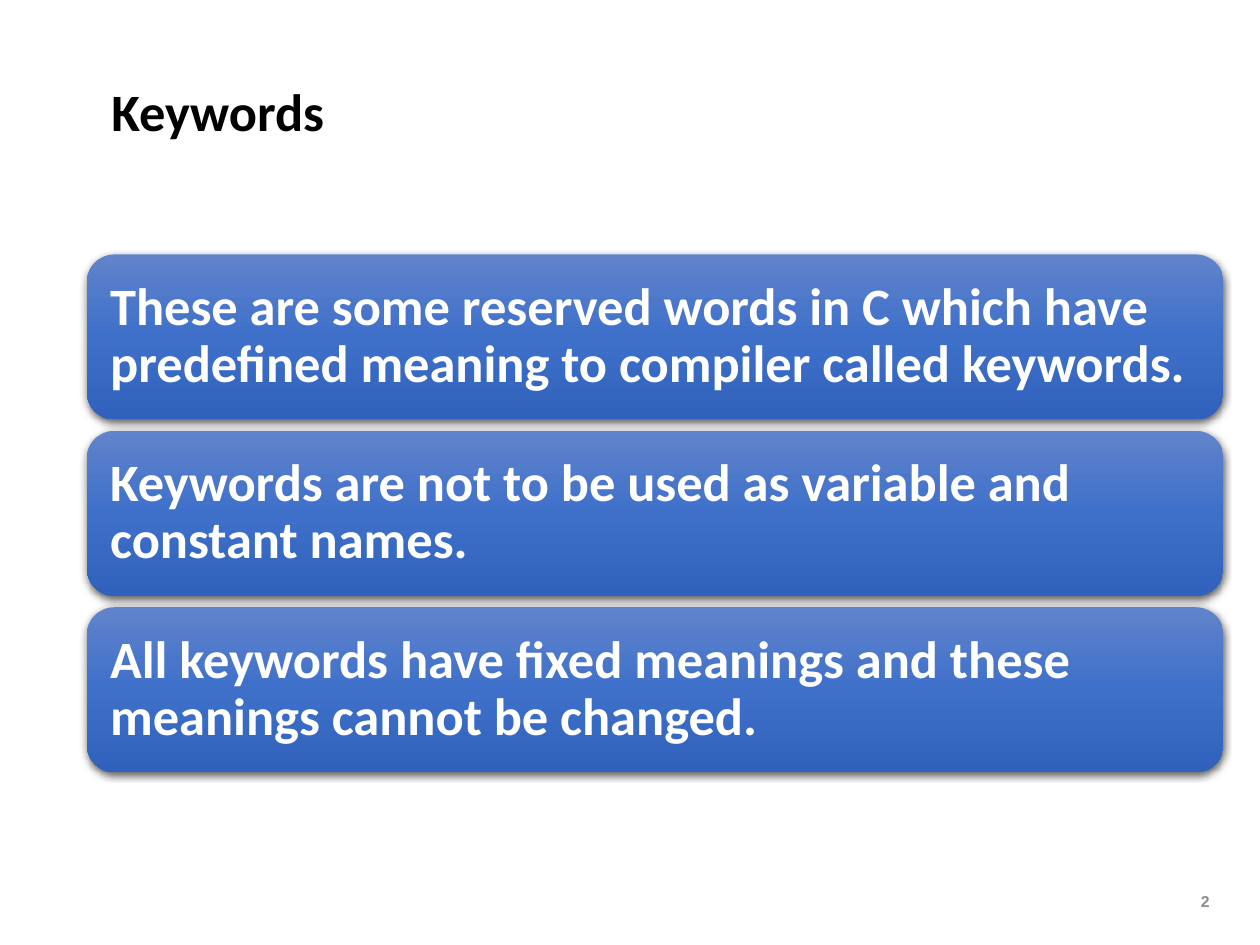
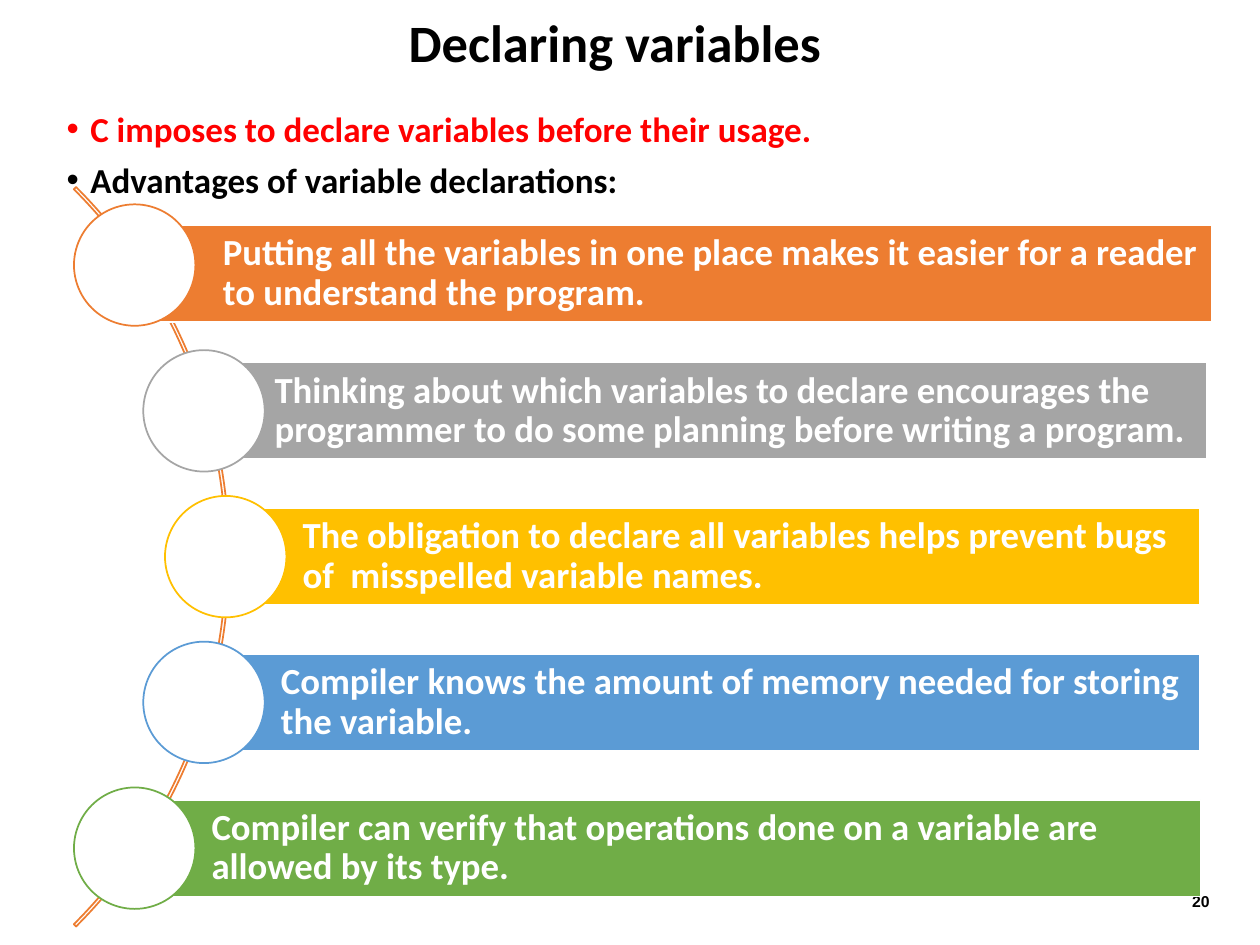
import pptx
import pptx.dml.color
import pptx.enum.shapes
import pptx.enum.text
import pptx.oxml
import pptx.oxml.ns
import pptx.util

Pt = pptx.util.Pt
SHAPE = pptx.enum.shapes.MSO_SHAPE
ALIGN = pptx.enum.text.PP_ALIGN
MIDDLE = pptx.enum.text.MSO_ANCHOR.MIDDLE
NS = pptx.oxml.ns.nsdecls("a")

COLORS = {
    "black": "000000",
    "white": "FFFFFF",
    "red": "FF0000",
    "number_gray": "8C8C8C",
    "card_top": "6183CB",
    "card_middle": "3E70CA",
    "card_bottom": "3062BB",
    "orange": "ED7D31",
    "gray": "A5A5A5",
    "yellow": "FFC000",
    "blue": "5B9BD5",
    "green": "70AD47",
}

KEYWORD_FACTS = [
    "These are some reserved words in C which have predefined meaning to compiler called keywords.",
    "Keywords are not to be used as variable and constant names.",
    "All keywords have fixed meanings and these meanings cannot be changed.",
]

# circle centre x, bar left, bar width, bar drop below the circle's centre line, colour, text
ADVANTAGES = [
    (77, 83.5, 609, 5, "orange",
     "Putting all the variables in one place makes it easier for a reader to understand the program."),
    (116.6, 113, 576.7, 0, "gray",
     "Thinking about which variables to declare encourages the programmer to do some planning "
     "before writing a program."),
    (129, 129, 556.5, 0, "yellow",
     "The obligation to declare all variables helps prevent bugs of  misspelled variable names."),
    (116.6, 116.6, 569, 0, "blue",
     "Compiler knows the amount of memory needed for storing the variable."),
    (77, 77, 609, 0, "green",
     "Compiler can verify that operations done on a variable are allowed by its type."),
]


def rgb(name):
    return pptx.dml.color.RGBColor.from_string(COLORS[name])


def place(shape, left, top, width, height):
    shape.left, shape.top = Pt(left), Pt(top)
    shape.width, shape.height = Pt(width), Pt(height)


def format_paragraph(p, size, color, align=ALIGN.LEFT, font="Calibri", line_spacing=0.9):
    p.alignment = align
    p.line_spacing = line_spacing
    for r in p.runs:
        r.font.name = font
        r.font.size = Pt(size)
        r.font.bold = True
        r.font.color.rgb = rgb(color)


def set_margins(tf, left, top, right, bottom):
    tf.margin_left, tf.margin_top = Pt(left), Pt(top)
    tf.margin_right, tf.margin_bottom = Pt(right), Pt(bottom)


def set_title(s, text, box, align):
    title = s.shapes.title
    place(title, *box)
    tf = title.text_frame
    tf.text = text
    tf.auto_size = pptx.enum.text.MSO_AUTO_SIZE.NONE
    tf.vertical_anchor = MIDDLE
    format_paragraph(tf.paragraphs[0], 30, "black", align)


def add_page_number(s, number, color):
    box = s.shapes.add_textbox(Pt(670.3), Pt(500.4), Pt(28), Pt(28.8))
    tf = box.text_frame
    tf.text = number
    tf.word_wrap = True
    tf.vertical_anchor = MIDDLE
    format_paragraph(tf.paragraphs[0], 9, color, ALIGN.RIGHT, "Arial", 1)


def add_shape(s, kind, box, fill=None, line=None):
    sp = s.shapes.add_shape(kind, *map(Pt, box))
    sp.shadow.inherit = False
    if fill:
        sp.fill.solid()
        sp.fill.fore_color.rgb = rgb(fill)
    else:
        sp.fill.background()
    if line:
        sp.line.color.rgb = rgb(line)
        sp.line.width = Pt(1)
    else:
        sp.line.fill.background()
    return sp


def set_shape_text(sp, text, size, margins):
    tf = sp.text_frame
    tf.text = text
    tf.word_wrap = True
    tf.vertical_anchor = MIDDLE
    set_margins(tf, *margins)
    format_paragraph(tf.paragraphs[0], size, "white")


def set_card_gradient(sp):
    sp.fill.gradient()
    sp.fill.gradient_angle = 270
    stops = sp.element.spPr.find(".//" + pptx.oxml.ns.qn("a:gsLst"))
    for stop in list(stops):
        stops.remove(stop)
    for position, name in ((0, "card_top"), (50, "card_middle"), (100, "card_bottom")):
        stops.append(pptx.oxml.parse_xml(
            f'<a:gs {NS} pos="{position * 1000}"><a:srgbClr val="{COLORS[name]}"/></a:gs>'))


def add_soft_shadow(sp):
    effects = sp.element.spPr.find(pptx.oxml.ns.qn("a:effectLst"))
    effects.append(pptx.oxml.parse_xml(
        f'<a:outerShdw {NS} blurRad="{Pt(4.5)}" dist="{Pt(1.5)}" dir="5400000" algn="ctr" '
        f'rotWithShape="0"><a:srgbClr val="{COLORS["black"]}"><a:alpha val="63000"/>'
        '</a:srgbClr></a:outerShdw>'))


def add_card(s, top, text):
    sp = add_shape(s, SHAPE.ROUNDED_RECTANGLE, (49.7, top, 649.4, 94.3))
    set_card_gradient(sp)
    add_soft_shadow(sp)
    set_shape_text(sp, text, 30, (8.64,) * 4)


def set_bullets(body, items):
    place(body, 33.1, 61.2, 666, 350)
    tf = body.text_frame
    tf.auto_size = pptx.enum.text.MSO_AUTO_SIZE.NONE
    set_margins(tf, 5, 2.9, 5, 2.9)
    tf.text = "\n".join(text for text, _ in items)
    for p, (_, color) in zip(tf.paragraphs, items):
        format_paragraph(p, 20, color, ALIGN.JUSTIFY)
        p.space_before = Pt(7.5)
        pPr = p._p.get_or_add_pPr()
        pPr.set("marL", str(Pt(13.5)))
        pPr.set("indent", str(-Pt(13.5)))
        pPr.append(pptx.oxml.parse_xml(f'<a:buFont {NS} typeface="Arial"/>'))
        pPr.append(pptx.oxml.parse_xml(f'<a:buChar {NS} char="•"/>'))


def add_arc(s):
    arc = add_shape(s, SHAPE.BLOCK_ARC, (-466.6, 19.4, 597.6, 597.6), line="orange")
    for i, value in enumerate((189, 27, 0.003)):
        arc.adjustments[i] = value


def add_advantage(s, center_y, center_x, left, width, drop, color, text):
    """Draw a coloured bar with a white circle over its left end."""
    bar_height, diameter = 55.2, 69.4
    bar = add_shape(s, SHAPE.RECTANGLE,
                    (left, center_y - bar_height / 2 + drop, width, bar_height), color, "white")
    set_shape_text(bar, text, 21, (43.9, 4.3, 4.3, 4.3))
    add_shape(s, SHAPE.OVAL,
              (center_x - diameter / 2, center_y - diameter / 2, diameter, diameter),
              "white", color)


def build_keywords(prs):
    s = prs.slides.add_slide(prs.slide_layouts[5])
    set_title(s, " Keywords", (49.7, 40.3, 649.4, 49.7), ALIGN.LEFT)
    add_page_number(s, "2", "number_gray")
    for i, text in enumerate(KEYWORD_FACTS):
        add_card(s, 145.4 + i * 100.8, text)


def build_declaring(prs):
    s = prs.slides.add_slide(prs.slide_layouts[1])
    set_title(s, "Declaring variables", (139.7, 5.8, 423.4, 40.3), ALIGN.CENTER)
    set_bullets(s.placeholders[1], [
        ("C imposes to declare variables before their usage. ", "red"),
        ("Advantages of variable declarations:", "black"),
    ])
    add_page_number(s, "20", "black")
    add_arc(s)
    for i, advantage in enumerate(ADVANTAGES):
        add_advantage(s, 151.5 + i * 83.3, *advantage)


def main():
    prs = pptx.Presentation()
    prs.slide_width, prs.slide_height = Pt(720), Pt(540)
    build_keywords(prs)
    build_declaring(prs)
    prs.save("out.pptx")


if __name__ == "__main__":
    main()
